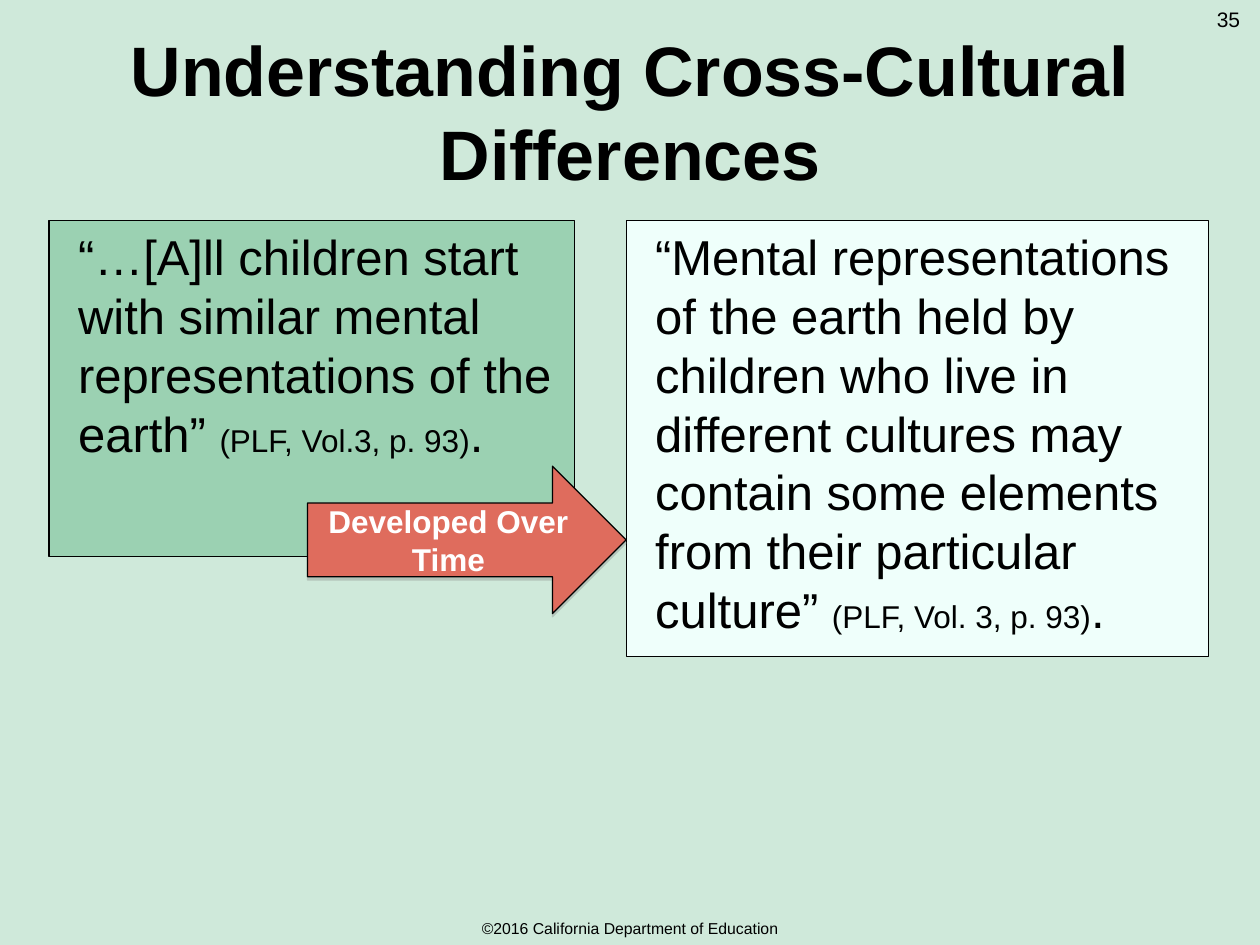
"""Build the slide on understanding cross-cultural differences."""
from lxml import etree
from pptx import Presentation
from pptx.dml.color import RGBColor
from pptx.enum.shapes import MSO_SHAPE
from pptx.enum.text import MSO_ANCHOR, PP_ALIGN
from pptx.oxml.ns import qn
from pptx.util import Inches, Pt

RECTANGLE, RIGHT_ARROW = MSO_SHAPE.RECTANGLE, MSO_SHAPE.RIGHT_ARROW
TOP, MIDDLE = MSO_ANCHOR.TOP, MSO_ANCHOR.MIDDLE
LEFT, CENTER = PP_ALIGN.LEFT, PP_ALIGN.CENTER

THEME = {
    "font": "Arial",
    "background": RGBColor.from_string("CFE9DA"),
    "ink": RGBColor.from_string("000000"),
    "start": RGBColor.from_string("9BD1B2"),
    "later": RGBColor.from_string("EFFFFB"),
    "arrow": RGBColor.from_string("DF6C5D"),
    "arrow_text": RGBColor.from_string("FFFFFF"),
    "shadow": "808080",
    "title_size": Pt(40),
    "quote_size": Pt(28),
    "label_size": Pt(18),
    "number_size": Pt(12),
    "footer_size": Pt(9),
    "line": Pt(0.75),
}


def write(shape, runs, align=CENTER, anchor=MIDDLE, color="ink", bold=False):
    frame = shape.text_frame
    frame.word_wrap = True
    frame.vertical_anchor = anchor
    paragraph = frame.paragraphs[0]
    paragraph.alignment = align
    for text, size in runs:
        run = paragraph.add_run()
        run.text = text
        style = {"name": THEME["font"], "size": THEME[size], "bold": bold}
        for attribute, value in style.items():
            setattr(run.font, attribute, value)
        run.font.color.rgb = THEME[color]


def add_panel(kind, box, fill):
    panel = slide.shapes.add_shape(kind, *map(Inches, box))
    panel.shadow.inherit = False
    panel.fill.solid()
    panel.fill.fore_color.rgb = THEME[fill]
    panel.line.color.rgb = THEME["ink"]
    panel.line.width = THEME["line"]
    return panel


presentation = Presentation()
presentation.slide_width, presentation.slide_height = Inches(10), Inches(7.5)
slide = presentation.slides.add_slide(presentation.slide_layouts[5])
slide.background.fill.solid()
slide.background.fill.fore_color.rgb = THEME["background"]

title = slide.shapes.title
title_place = {"left": 0, "top": 0, "width": 10, "height": 1.75}
for side, length in title_place.items():
    setattr(title, side, Inches(length))
write(title, [("Understanding Cross-Cultural Differences", "title_size")], bold=True)

quotes = [
    ((0.39, 1.75, 4.17, 2.67), "start",
     "“…[A]ll children start with similar mental representations of the earth” ",
     "(PLF, Vol.3, p. 93)"),
    ((4.97, 1.75, 4.62, 3.46), "later",
     "“Mental representations of the earth held by children who live in "
     "different cultures may contain some elements from their particular culture” ",
     "(PLF, Vol. 3, p. 93)"),
]
for box, fill, quote, citation in quotes:
    quote_panel = add_panel(RECTANGLE, box, fill)
    quote_panel.text_frame.margin_left = Inches(0.23)
    runs = [(quote, "quote_size"), (citation, "label_size"), (".", "quote_size")]
    write(quote_panel, runs, align=LEFT, anchor=TOP)

arrow = add_panel(RIGHT_ARROW, (2.44, 3.7, 2.53, 1.17), "arrow")
write(arrow, [("Developed Over Time", "label_size")], color="arrow_text", bold=True)
effects = arrow._element.spPr.find(qn("a:effectLst"))
shadow = etree.SubElement(effects, qn("a:outerShdw"), blurRad="0",
                          dist=str(Pt(1.8)), dir="5400000", rotWithShape="0")
shadow_color = etree.SubElement(shadow, qn("a:srgbClr"), val=THEME["shadow"])
etree.SubElement(shadow_color, qn("a:alpha"), val="35000")

small_texts = [
    ((0, 7.24, 10, 0.25), "©2016 California Department of Education", "footer_size", MIDDLE),
    ((9.5, 0, 0.5, 0.4), "35", "number_size", TOP),
]
for box, text, size, anchor in small_texts:
    write(slide.shapes.add_textbox(*map(Inches, box)), [(text, size)], anchor=anchor)

presentation.save("out.pptx")
